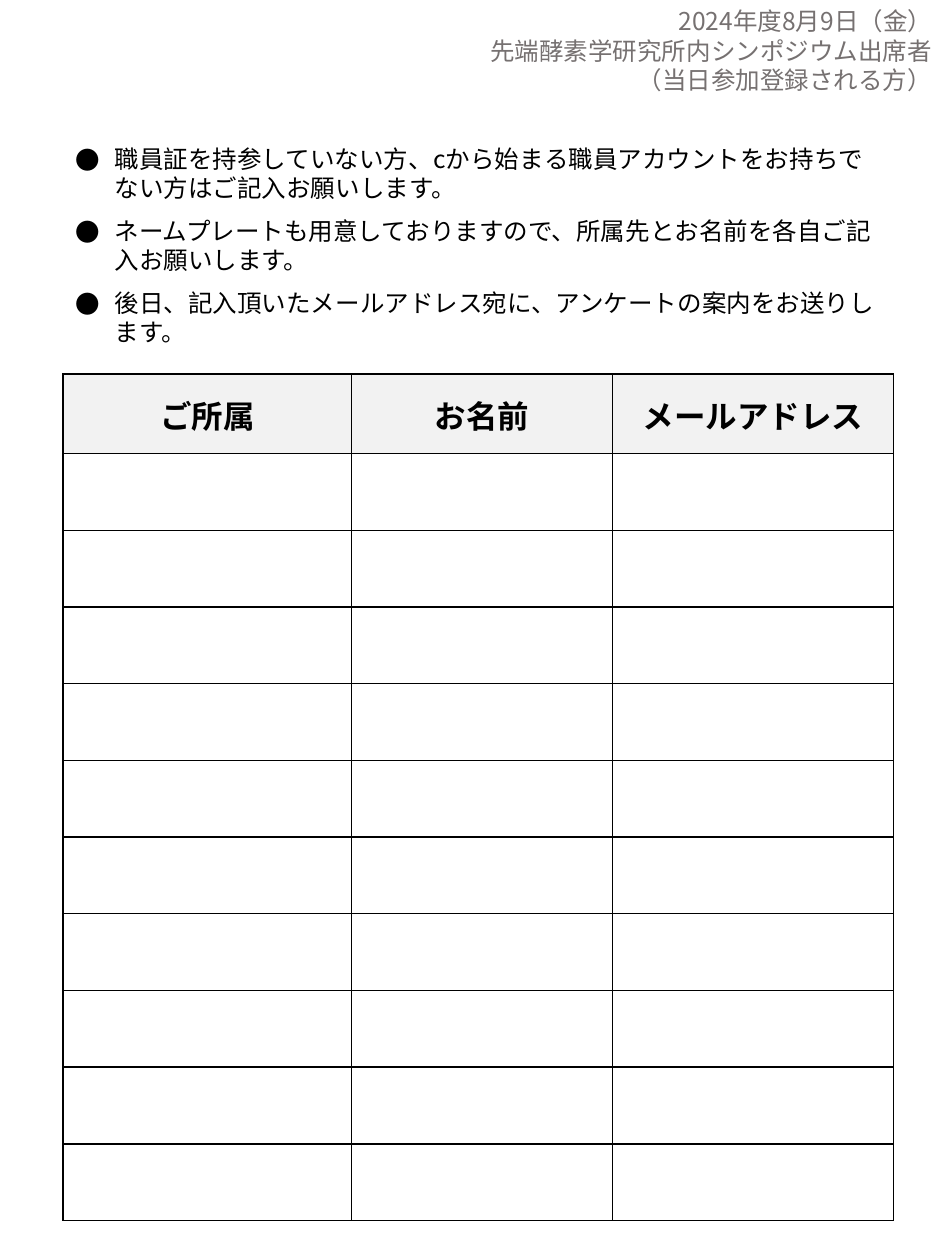
from lxml import etree
from pptx import Presentation
from pptx.dml.color import RGBColor
from pptx.enum.text import MSO_ANCHOR, MSO_AUTO_SIZE, PP_ALIGN
from pptx.oxml.ns import qn
from pptx.util import Inches, Pt

TOP, MIDDLE = MSO_ANCHOR.TOP, MSO_ANCHOR.MIDDLE
LEFT, RIGHT, CENTER = PP_ALIGN.LEFT, PP_ALIGN.RIGHT, PP_ALIGN.CENTER
NO_AUTOFIT = MSO_AUTO_SIZE.NONE

FONT = "Noto Sans CJK JP"
BLACK, GREY, PALE, WHITE = "000000", "767171", "F2F2F2", "FFFFFF"
GRID_COLUMNS, GRID_ROWS = 750, 1000
MARGIN, CONTENT_WIDTH = 50, 659
LINE_HEIGHT = 16.85

HEADING = ["2024年度8月9日（金）", "先端酵素学研究所内シンポジウム出席者（当日参加登録される方）"]
NOTICES = [
    "職員証を持参していない方、cから始まる職員アカウントをお持ちでない方はご記入お願いします。",
    "ネームプレートも用意しておりますので、所属先とお名前を各自ご記入お願いします。",
    "後日、記入頂いたメールアドレス宛に、アンケートの案内をお送りします。",
]
COLUMNS = {"ご所属": 229, "お名前": 207, "メールアドレス": 223}
ENTRY_ROWS, HEADER_HEIGHT, ENTRY_HEIGHT = 10, 63, 60.9


def color(value):
    """Turn a hex string into a colour."""
    return RGBColor.from_string(value)


def grid(units):
    """Turn grid units, a hundredth of an inch each, into a length."""
    return Inches(units / 100)


def format_runs(paragraph, size, hex_color, bold=False):
    """Give every run of a paragraph its font, size and colour."""
    for run in paragraph.runs:
        run.font.name = FONT
        run.font.size = Pt(size)
        run.font.bold = bold
        run.font.color.rgb = color(hex_color)
        east_asian = etree.SubElement(run.font._element, qn("a:ea"))
        east_asian.set("typeface", FONT)


def set_bullet(paragraph, indent):
    """Give a paragraph a round bullet with a hanging indent."""
    properties = paragraph._p.get_or_add_pPr()
    properties.set("marL", str(grid(indent)))
    properties.set("indent", str(-grid(indent)))
    etree.SubElement(properties, qn("a:buFont")).set("typeface", FONT)
    etree.SubElement(properties, qn("a:buChar")).set("char", "●")


def fill_placeholder(shape, box, lines, alignment, hex_color, gap=0):
    """Place a placeholder on the grid and write its paragraphs."""
    shape.left, shape.top, shape.width, shape.height = map(grid, box)
    text_frame = shape.text_frame
    text_frame.text = "\n".join(lines)
    text_frame.word_wrap = True
    text_frame.auto_size = NO_AUTOFIT
    text_frame.vertical_anchor = TOP
    for index, paragraph in enumerate(text_frame.paragraphs):
        paragraph.alignment = alignment
        paragraph.line_spacing = Pt(LINE_HEIGHT)
        paragraph.space_before = Pt(gap if index else 0)
        format_runs(paragraph, 14, hex_color)


def set_borders(cell):
    """Draw a thin black line on each side of a cell."""
    properties = cell._tc.get_or_add_tcPr()
    for side in ("a:lnL", "a:lnR", "a:lnT", "a:lnB"):
        line = etree.SubElement(properties, qn(side), w=str(Pt(1)))
        fill = etree.SubElement(line, qn("a:solidFill"))
        etree.SubElement(fill, qn("a:srgbClr"), val=BLACK)


def format_cell(cell, hex_fill):
    """Set the borders, fill, margins and anchor of a cell."""
    set_borders(cell)
    cell.fill.solid()
    cell.fill.fore_color.rgb = color(hex_fill)
    cell.margin_left = cell.margin_right = cell.margin_top = grid(1)
    cell.margin_bottom = 0
    cell.vertical_anchor = MIDDLE


def add_sign_in_table(slide):
    """Add the table with a header row and empty rows to sign."""
    height = HEADER_HEIGHT + ENTRY_ROWS * ENTRY_HEIGHT
    box = map(grid, (MARGIN, 297, CONTENT_WIDTH, height))
    table = slide.shapes.add_table(ENTRY_ROWS + 1, len(COLUMNS), *box).table
    for index, row in enumerate(table.rows):
        row.height = grid(ENTRY_HEIGHT if index else HEADER_HEIGHT)
        for cell in row.cells:
            format_cell(cell, WHITE if index else PALE)
    for index, (label, width) in enumerate(COLUMNS.items()):
        table.columns[index].width = grid(width)
        paragraph = table.cell(0, index).text_frame.paragraphs[0]
        paragraph.text = label
        paragraph.alignment = CENTER
        format_runs(paragraph, 18, BLACK, bold=True)


def main():
    """Build the sign-in sheet and save it."""
    presentation = Presentation()
    presentation.slide_width = grid(GRID_COLUMNS)
    presentation.slide_height = grid(GRID_ROWS)
    slide = presentation.slides.add_slide(presentation.slide_layouts[1])
    title, body = slide.placeholders
    fill_placeholder(title, (347, 0, 403, 81), HEADING, RIGHT, GREY)
    fill_placeholder(body, (MARGIN, 109, CONTENT_WIDTH, 172), NOTICES, LEFT, BLACK, gap=7.5)
    for paragraph in body.text_frame.paragraphs:
        set_bullet(paragraph, 31)
    add_sign_in_table(slide)
    presentation.save("out.pptx")


if __name__ == "__main__":
    main()
